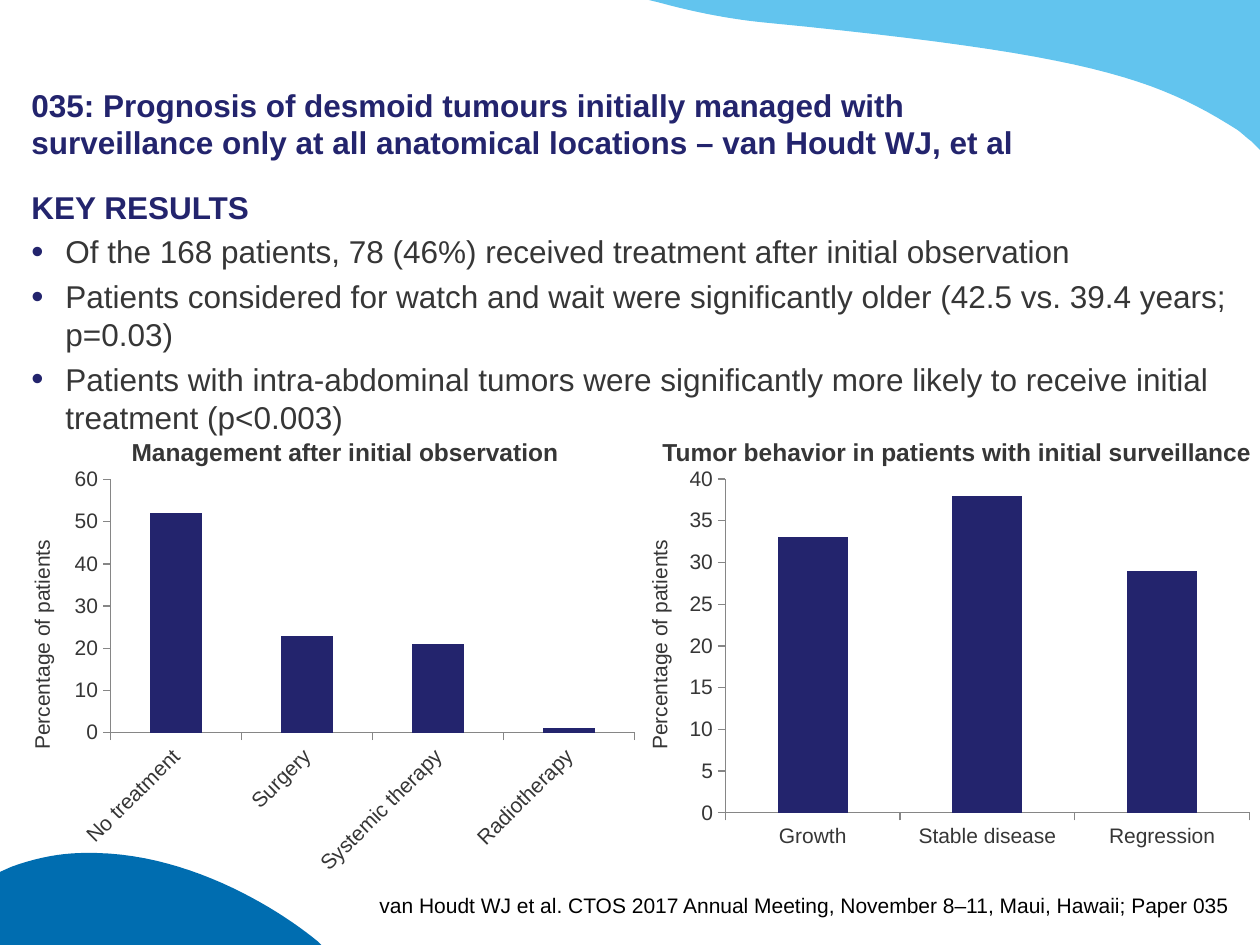
from dataclasses import dataclass

from lxml import etree
from pptx import Presentation, util as u
from pptx.chart.data import CategoryChartData
from pptx.dml.color import RGBColor
from pptx.enum import chart as ch, text as tx
from pptx.oxml.ns import qn


@dataclass(frozen=True)
class Theme:
    navy: str = "23246D"
    grey: str = "363636"
    axis: str = "868686"
    sky: str = "62C4EE"
    blue: str = "006DB0"
    black: str = "000000"
    font: str = "Arial"
    head: int = 18
    label: int = 14
    small: int = 12


@dataclass(frozen=True)
class Box:
    """A place on the grid: column, row, columns wide, rows high."""
    col: float
    row: float
    wide: float
    high: float


@dataclass(frozen=True)
class Para:
    text: str
    size: int
    color: str
    bold: bool = False
    bullet: bool = False
    align: tx.PP_ALIGN = tx.PP_ALIGN.LEFT
    after: int = 0


@dataclass(frozen=True)
class Panel:
    title: str
    head: Box
    plot: Box
    side: Box
    data: dict[str, int]
    top: int
    step: int
    turn: int = 0


T = Theme()
COLS, ROWS = 100, 75
UNIT = u.Inches(10) // COLS  # grid cells are square


def rgb(code: str) -> RGBColor:
    return RGBColor.from_string(code)


def place(box: Box) -> list[int]:
    return [round(n * UNIT) for n in (box.col, box.row, box.wide, box.high)]


def style(font, size: int, color: str, bold: bool = False) -> None:
    font.name, font.size, font.bold = T.font, u.Pt(size), bold
    font.color.rgb = rgb(color)


def add_bullet(para) -> None:
    props = para._p.get_or_add_pPr()
    indent = u.Inches(0.27)
    props.set("marL", str(indent))
    props.set("indent", str(-indent))
    color = etree.SubElement(props, qn("a:buClr"))
    etree.SubElement(color, qn("a:srgbClr"), val=T.navy)
    etree.SubElement(props, qn("a:buSzPct"), val="110000")
    etree.SubElement(props, qn("a:buFont"), typeface=T.font)
    etree.SubElement(props, qn("a:buChar"), char="•")


def add_text(slide, box: Box, paras: list[Para], wrap: bool = False,
             pad: tuple = (0.1, 0.05, 0.1, 0.05), low: bool = False,
             turn: int = 0) -> None:
    shape = slide.shapes.add_textbox(*place(box))
    shape.rotation = turn
    frame = shape.text_frame
    frame.word_wrap = wrap
    frame.vertical_anchor = tx.MSO_ANCHOR.BOTTOM if low else tx.MSO_ANCHOR.TOP
    (frame.margin_left, frame.margin_top,
     frame.margin_right, frame.margin_bottom) = map(u.Inches, pad)
    for i, item in enumerate(paras):
        para = frame.paragraphs[0] if i == 0 else frame.add_paragraph()
        para.text, para.alignment = item.text, item.align
        para.space_after = u.Pt(item.after)
        if item.bullet:
            add_bullet(para)
        style(para.font, item.size, item.color, item.bold)


def trace(path: list[tuple], steps: int = 24) -> list[tuple]:
    """Turn points (2 numbers) and Bezier curves (6 numbers) into points."""
    pts = []
    for part in path:
        if len(part) == 2:
            pts.append(part)
            continue
        x, y = pts[-1]
        ax, ay, bx, by, ex, ey = part
        for i in range(1, steps + 1):
            t = i / steps
            s = 1 - t
            mix = (s ** 3, 3 * s * s * t, 3 * s * t * t, t ** 3)
            pts.append(tuple(sum(m * v for m, v in zip(mix, line))
                             for line in ((x, ax, bx, ex), (y, ay, by, ey))))
    return pts


def add_wave(slide, path: list[tuple], color: str) -> None:
    pts = [(round(x * UNIT), round(y * UNIT)) for x, y in trace(path)]
    pen = slide.shapes.build_freeform(*pts[0])
    pen.add_line_segments(pts[1:], close=True)
    shape = pen.convert_to_shape()
    shape.shadow.inherit = False
    shape.fill.solid()
    shape.fill.fore_color.rgb = rgb(color)
    shape.line.fill.background()


def add_chart(slide, panel: Panel) -> None:
    data = CategoryChartData()
    data.categories = list(panel.data)
    data.add_series("Series 1", list(panel.data.values()))
    chart = slide.shapes.add_chart(ch.XL_CHART_TYPE.COLUMN_CLUSTERED,
                                   *place(panel.plot), data).chart
    chart.has_legend = chart.has_title = False
    style(chart.font, T.head, T.grey)
    plot = chart.plots[0]
    plot.gap_width, plot.vary_by_categories = 150, False
    fill = plot.series[0].format.fill
    fill.solid()
    fill.fore_color.rgb = rgb(T.navy)
    for axis in (chart.category_axis, chart.value_axis):
        axis.has_major_gridlines = False
        axis.major_tick_mark = ch.XL_TICK_MARK.OUTSIDE
        axis.format.line.color.rgb = rgb(T.axis)
        style(axis.tick_labels.font, T.small, T.grey)
    axis = chart.value_axis
    axis.minimum_scale, axis.maximum_scale = 0, panel.top
    axis.major_unit = panel.step
    if panel.turn:
        body = chart.category_axis._element.find(
            f"{qn('c:txPr')}/{qn('a:bodyPr')}")
        body.set("rot", str(panel.turn * 60000))
        body.set("vert", "horz")


def add_panel(slide, panel: Panel) -> None:
    add_chart(slide, panel)
    add_text(slide, panel.side,
             [Para("Percentage of patients", T.small, T.grey)], turn=270)
    add_text(slide, panel.head, [Para(panel.title, T.label, T.grey, True,
                                      align=tx.PP_ALIGN.CENTER)])


SKY = [(51.5, 0), (100, 0), (100, 11.9), (99.3, 11.2),
       (98.9, 10.9, 98.6, 10.6, 98.2, 10.3), (91.7, 6.2, 86.4, 4.3, 60.8, 1.8),
       (57.7, 1.5, 54.9, 0.9, 52.3, 0.2)]
HILL = [(6.7, 67.7), (14.5, 67.5, 21.8, 71.9, 25.2, 74.7), (25.5, 75), (0, 75),
        (0, 69.2), (0.9, 68.8), (2.8, 68.1, 4.8, 67.7, 6.7, 67.7)]
TITLE = ("035: Prognosis of desmoid tumours initially managed with surveillance "
         "only at all anatomical locations – van Houdt WJ, et al")
POINTS = [
    "Of the 168 patients, 78 (46%) received treatment after initial observation",
    "Patients considered for watch and wait were significantly older "
    "(42.5 vs. 39.4 years; p=0.03)",
    "Patients with intra-abdominal tumors were significantly more likely to "
    "receive initial treatment (p<0.003)"]
SOURCE = ("van Houdt WJ et al. CTOS 2017 Annual Meeting, November 8–11, "
          "Maui, Hawaii; Paper 035")
PANELS = [
    Panel("Management after initial observation", Box(9.4, 34.2, 36, 3.4),
          Box(5, 36.5, 46.3, 33.6), Box(-6.1, 49.6, 18.8, 3),
          {"No treatment": 52, "Surgery": 23, "Systemic therapy": 21,
           "Radiotherapy": 1}, 60, 10, -45),
    Panel("Tumor behavior in patients with initial surveillance",
          Box(51.5, 34.2, 48.9, 3.4), Box(53.8, 36.5, 46.3, 31.4),
          Box(42.9, 49.6, 18.8, 3),
          {"Growth": 33, "Stable disease": 38, "Regression": 29}, 40, 5)]


def main() -> None:
    deck = Presentation()
    deck.slide_width, deck.slide_height = COLS * UNIT, ROWS * UNIT
    slide = deck.slides.add_slide(deck.slide_layouts[6])
    # Corner waves
    add_wave(slide, SKY, T.sky)
    add_wave(slide, HILL, T.blue)
    # Title, results and source
    add_text(slide, Box(2.5, 2.5, 78, 10.3), [Para(TITLE, T.head, T.navy, True)],
             wrap=True, pad=(0, 0.05, 0, 0), low=True)
    add_text(slide, Box(2.5, 14.4, 95, 58.1),
             [Para("KEY RESULTS", T.head, T.navy, True, after=4)]
             + [Para(p, T.head, T.grey, bullet=True, after=4) for p in POINTS],
             wrap=True, pad=(0, 0.05, 0, 0.05))
    add_text(slide, Box(29.6, 70.8, 68, 2), [Para(
        SOURCE, T.small, T.black, align=tx.PP_ALIGN.RIGHT)],
        pad=(0, 0, 0, 0), low=True)
    # Charts with their headings
    for panel in PANELS:
        add_panel(slide, panel)
    deck.save("out.pptx")


if __name__ == "__main__":
    main()
